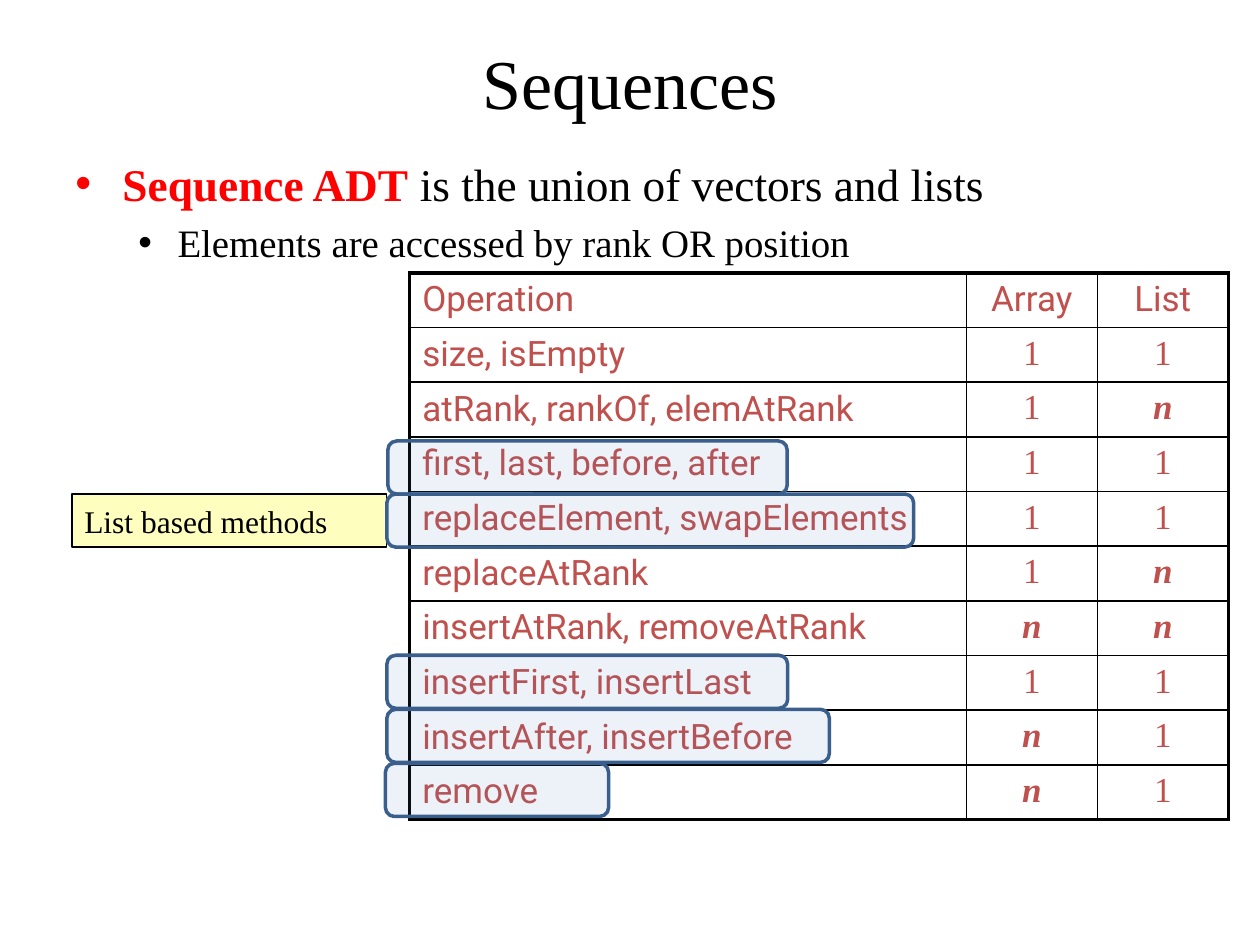
from dataclasses import dataclass

from lxml import etree
from pptx import Presentation
from pptx import util as u
from pptx.dml.color import RGBColor
from pptx.enum import shapes, text
from pptx.oxml.ns import qn


@dataclass(frozen=True)
class Theme:
    serif: str = "Times New Roman"
    sans: str = "Roboto"
    black: str = "000000"
    red: str = "FF0000"
    table_text: str = "C0504D"
    note: str = "FEFEBE"
    highlight: str = "4F81BD"
    highlight_line: str = "3A5F8C"
    title_size: float = 40
    point_size: float = 25.9
    subpoint_size: float = 22.2
    cell_size: float = 20
    note_size: float = 18
    thin: float = 1
    thick: float = 2.25


THEME = Theme()


@dataclass(frozen=True)
class Frame:
    """Left, top, width and height in centimetres."""
    left: float
    top: float
    width: float
    height: float

    def lengths(self) -> list[u.Cm]:
        return [u.Cm(v) for v in (self.left, self.top, self.width, self.height)]


@dataclass(frozen=True)
class Operation:
    name: str
    array: str
    list: str


HEADER = Operation("Operation", "Array", "List")
OPERATIONS = [
    HEADER,
    Operation("size, isEmpty", "1", "1"),
    Operation("atRank, rankOf, elemAtRank", "1", "n"),
    Operation("first, last, before, after", "1", "1"),
    Operation("replaceElement, swapElements", "1", "1"),
    Operation("replaceAtRank", "1", "n"),
    Operation("insertAtRank, removeAtRank", "n", "n"),
    Operation("insertFirst, insertLast", "1", "1"),
    Operation("insertAfter, insertBefore", "n", "1"),
    Operation("remove", "n", "1"),
]
COLUMN_WIDTHS = [11.22, 2.64, 2.64]
TABLE = Frame(8.26, 5.5, sum(COLUMN_WIDTHS), 10.95)

BAND_HEIGHT = 1.07
LIST_METHODS = [
    Frame(7.82, 8.89, 8.05, BAND_HEIGHT),
    Frame(7.8, 9.96, 10.62, BAND_HEIGHT),
    Frame(7.8, 13.21, 8.08, BAND_HEIGHT),
    Frame(7.8, 14.3, 8.92, BAND_HEIGHT),
    Frame(7.77, 15.39, 4.5, BAND_HEIGHT),
]


def add_span(para, words: str, size: float, color: str = THEME.black,
             font: str = THEME.serif, bold: bool = False, italic: bool = False) -> None:
    span = para.add_run()
    span.text = words
    span.font.name = font
    span.font.size = u.Pt(size)
    span.font.bold = bold
    span.font.italic = italic
    span.font.color.rgb = RGBColor.from_string(color)


def set_bullet(para, margin: float, hang: float) -> None:
    props = para._p.get_or_add_pPr()
    props.set("marL", str(u.Cm(margin)))
    props.set("indent", str(-u.Cm(hang)))
    etree.SubElement(props, qn("a:buFont")).set("typeface", "Arial")
    etree.SubElement(props, qn("a:buChar")).set("char", "•")


def add_title(page) -> None:
    title = page.shapes.title
    title.left, title.top, title.width, title.height = Frame(1.27, 0.76, 22.86, 1.78).lengths()
    title.text_frame.vertical_anchor = text.MSO_ANCHOR.MIDDLE
    para = title.text_frame.paragraphs[0]
    para.alignment = text.PP_ALIGN.CENTER
    add_span(para, "Sequences", THEME.title_size)


def add_points(page) -> None:
    box = page.shapes.add_textbox(*Frame(1.27, 3.02, 22.86, 2.11).lengths())
    box.text_frame.word_wrap = True
    point = box.text_frame.paragraphs[0]
    set_bullet(point, 0.95, 0.95)
    add_span(point, "Sequence ADT", THEME.point_size, THEME.red, bold=True)
    add_span(point, " is the union of vectors and lists", THEME.point_size)
    subpoint = box.text_frame.add_paragraph()
    subpoint.level = 1
    subpoint.space_before = u.Pt(5)
    set_bullet(subpoint, 2.06, 0.79)
    add_span(subpoint, "Elements are accessed by rank OR position", THEME.subpoint_size)


def set_borders(cell, row: int, column: int) -> None:
    """Thick lines on the outside of the table, thin ones within."""
    outer = {
        "lnL": column == 0,
        "lnR": column == len(COLUMN_WIDTHS) - 1,
        "lnT": row == 0,
        "lnB": row == len(OPERATIONS) - 1,
    }
    props = cell._tc.get_or_add_tcPr()
    for side, is_outer in outer.items():
        line = etree.SubElement(props, qn(f"a:{side}"))
        line.set("w", str(u.Pt(THEME.thick if is_outer else THEME.thin)))
        fill = etree.SubElement(line, qn("a:solidFill"))
        etree.SubElement(fill, qn("a:srgbClr")).set("val", THEME.black)


def add_cost_table(page) -> None:
    table = page.shapes.add_table(
        len(OPERATIONS), len(COLUMN_WIDTHS), *TABLE.lengths()).table
    table.first_row = table.horz_banding = False
    for column, width in zip(table.columns, COLUMN_WIDTHS):
        column.width = u.Cm(width)
    for r, operation in enumerate(OPERATIONS):
        table.rows[r].height = u.Cm(TABLE.height / len(OPERATIONS))
        for c, words in enumerate((operation.name, operation.array, operation.list)):
            cell = table.cell(r, c)
            set_borders(cell, r, c)
            cell.fill.background()
            para = cell.text_frame.paragraphs[0]
            para.alignment = text.PP_ALIGN.CENTER if c else text.PP_ALIGN.LEFT
            is_cost = c > 0 and operation is not HEADER
            is_linear = words == "n"
            add_span(para, words, THEME.cell_size, THEME.table_text,
                     THEME.serif if is_cost else THEME.sans, is_linear, is_linear)


def add_panel(page, kind, frame: Frame, fill: str, line: str, line_width: float):
    panel = page.shapes.add_shape(kind, *frame.lengths())
    panel.shadow.inherit = False
    panel.fill.solid()
    panel.fill.fore_color.rgb = RGBColor.from_string(fill)
    panel.line.color.rgb = RGBColor.from_string(line)
    panel.line.width = u.Pt(line_width)
    return panel


def add_note(page) -> None:
    note = add_panel(page, shapes.MSO_SHAPE.RECTANGLE, Frame(1.45, 9.96, 6.35, BAND_HEIGHT),
                     THEME.note, THEME.black, 0.75)
    note.text_frame.word_wrap = True
    note.text_frame.vertical_anchor = text.MSO_ANCHOR.MIDDLE
    para = note.text_frame.paragraphs[0]
    para.alignment = text.PP_ALIGN.LEFT
    add_span(para, "List based methods", THEME.note_size)


def add_highlight(page, frame: Frame) -> None:
    band = add_panel(page, shapes.MSO_SHAPE.ROUNDED_RECTANGLE, frame,
                     THEME.highlight, THEME.highlight_line, 2)
    color = band._element.spPr.find(qn("a:solidFill")).find(qn("a:srgbClr"))
    etree.SubElement(color, qn("a:alpha")).set("val", "10000")


def main() -> None:
    deck = Presentation()
    deck.slide_width, deck.slide_height = u.Cm(25.4), u.Cm(19.05)
    page = deck.slides.add_slide(deck.slide_layouts.get_by_name("Title Only"))
    add_title(page)
    add_points(page)
    add_cost_table(page)
    add_note(page)
    for frame in LIST_METHODS:
        add_highlight(page, frame)
    deck.save("out.pptx")


if __name__ == "__main__":
    main()
